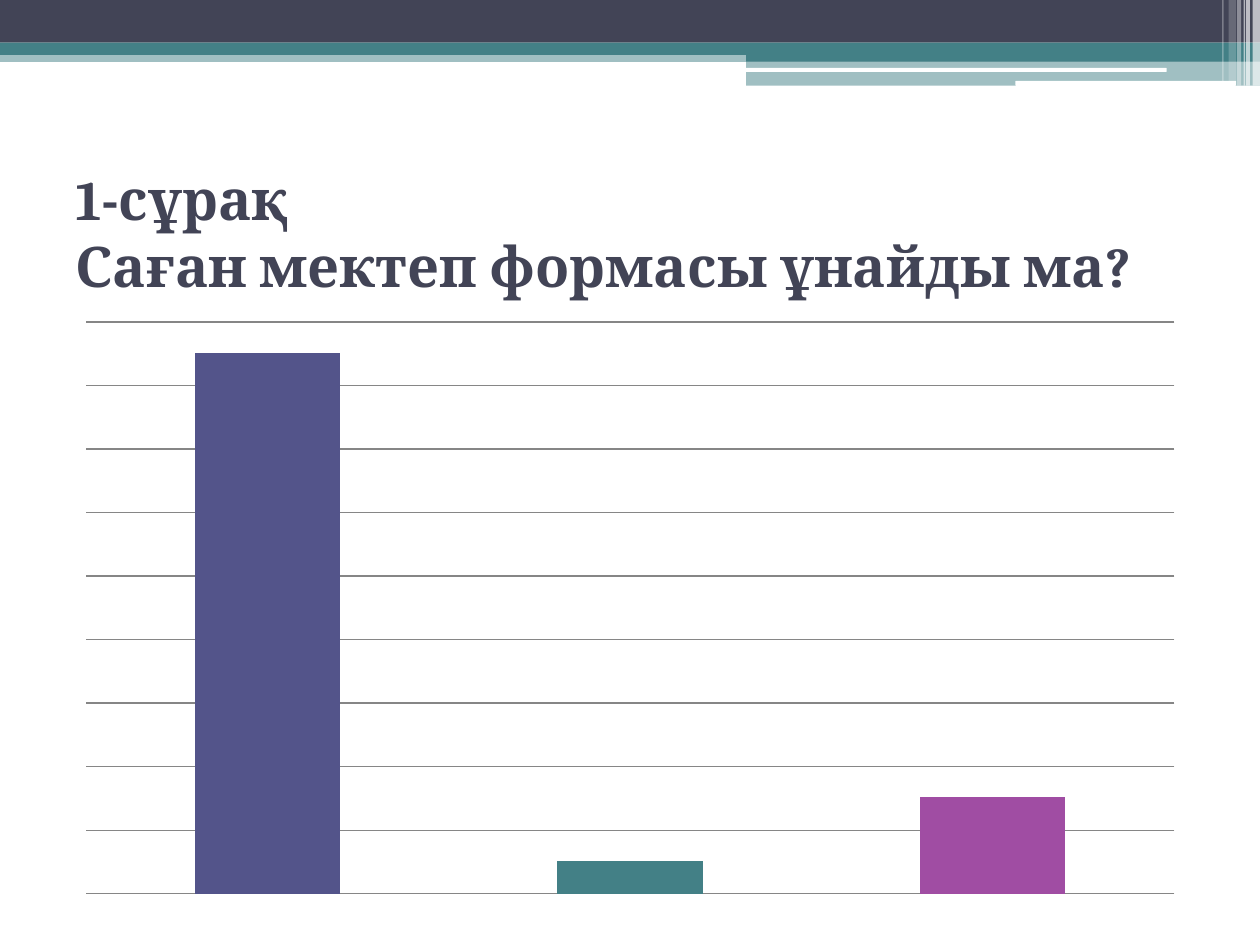
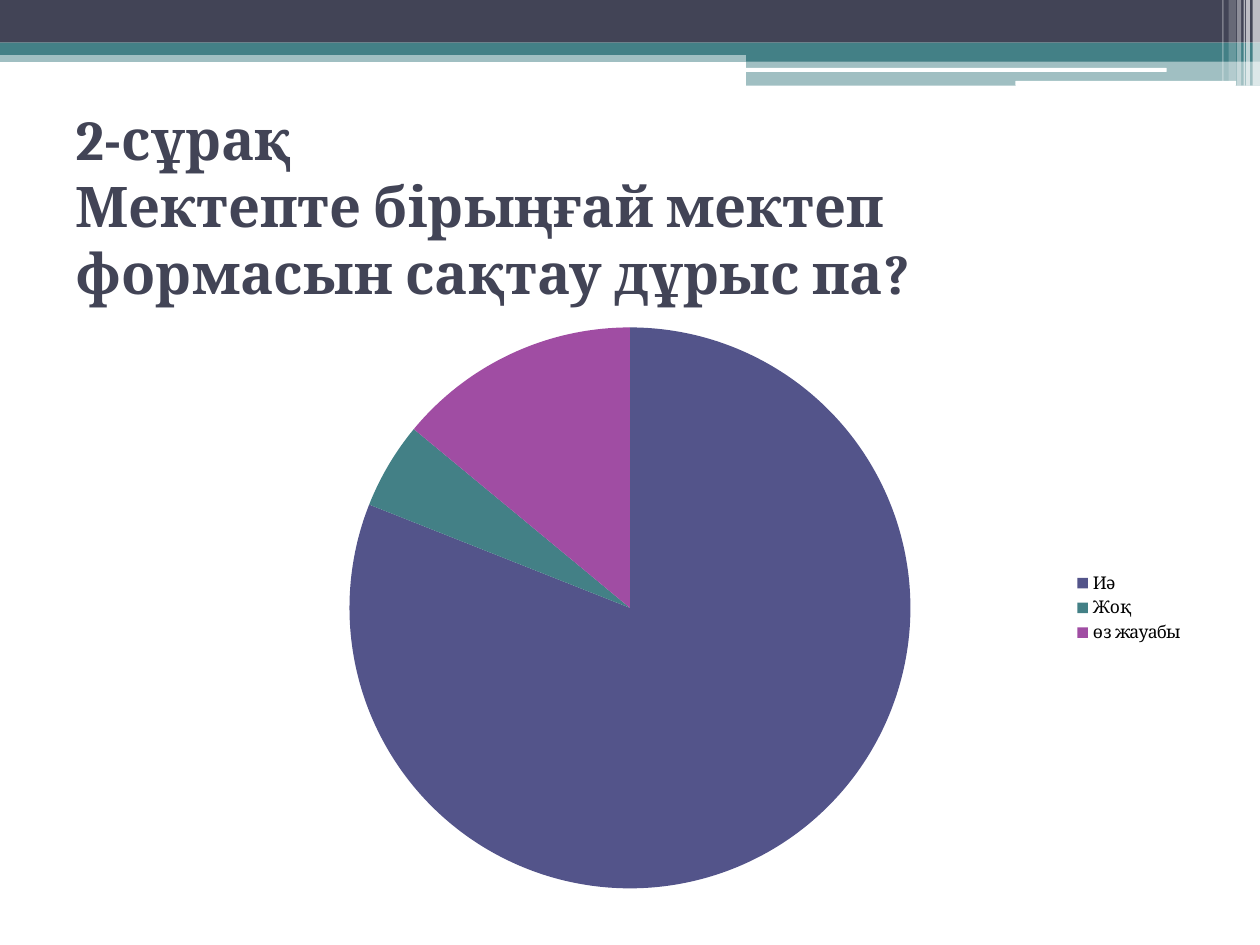
from pptx import Presentation
from pptx.chart.data import CategoryChartData
from pptx.dml.color import RGBColor
from pptx.enum.chart import XL_CHART_TYPE as ChartType, XL_LEGEND_POSITION as LegendPos
from pptx.enum.shapes import MSO_SHAPE as Shape
from pptx.enum.text import MSO_ANCHOR as Anchor, MSO_AUTO_SIZE as AutoSize, PP_ALIGN as Align
from pptx.oxml.ns import qn
from pptx.util import Cm, Pt
from lxml.etree import SubElement

INK = RGBColor(0x42, 0x44, 0x56)
TEAL = RGBColor(0x43, 0x80, 0x86)
INDIGO = RGBColor(0x53, 0x54, 0x8A)
PURPLE = RGBColor(0xA0, 0x4D, 0xA3)
GRID = RGBColor(0x86, 0x86, 0x86)
WHITE = RGBColor(0xFF, 0xFF, 0xFF)
BLACK = RGBColor(0, 0, 0)
ANSWER_COLORS = (INDIGO, TEAL, PURPLE)

FONT = "Cambria"
PAGE_W, PAGE_H = 25.4, 19.05
MARGIN = 1.27
BODY_W = PAGE_W - 2 * MARGIN
TITLE_BOTTOM = 6.15
CHART_TOP, CHART_H = 6.25, 12.01

# Header bands: left, top, width, height, colour, opacity in percent
STEP_X = 15.04
BANDS = [
    (0, 1.02, PAGE_W, 0.23, TEAL, 50),
    (0, 0, PAGE_W, 0.86, INK, 100),
    (0, 0.86, PAGE_W, 0.25, TEAL, 100),
    (STEP_X, 0.99, PAGE_W - STEP_X, 0.25, TEAL, 100),
    (STEP_X, 1.23, PAGE_W - STEP_X, 0.5, TEAL, 50),
]
WHITE_BARS = [(15.01, 1.37, 8.51, 0.08), (20.47, 1.63, 4.45, 0.1)]
# Stripes at the right edge: left, width, height, opacity
STRIPES = [
    (25.25, 0.15, 1.73, 65),
    (25.12, 0.08, 1.73, 65),
    (25.07, 0.03, 1.73, 60),
    (24.94, 0.08, 1.73, 40),
    (24.77, 0.15, 1.63, 20),
    (24.64, 0.03, 1.63, 30),
]


def style_font(font, size, color, bold=False):
    font.name, font.size, font.bold = FONT, Pt(size), bold
    font.color.rgb = color


def write(frame, text, size=32, color=INK, bold=True, align=Align.LEFT, anchor=Anchor.MIDDLE):
    frame.word_wrap = True
    frame.auto_size = AutoSize.NONE
    frame.vertical_anchor = anchor
    paragraph = frame.paragraphs[0]
    paragraph.text = text
    paragraph.alignment = align
    for run in paragraph.runs:
        style_font(run.font, size, color, bold)


class Deck:
    def __init__(self):
        self.prs = Presentation()
        self.prs.slide_width, self.prs.slide_height = Cm(PAGE_W), Cm(PAGE_H)
        self.layout = self.prs.slide_layouts[5]
        self.slide = None

    def new_slide(self):
        self.slide = self.prs.slides.add_slide(self.layout)

    def band(self, left, top, width, height, color, opacity=100, kind=Shape.RECTANGLE):
        band = self.slide.shapes.add_shape(kind, Cm(left), Cm(top), Cm(width), Cm(height))
        band.shadow.inherit = False
        band.line.fill.background()
        band.fill.solid()
        band.fill.fore_color.rgb = color
        if opacity < 100:
            tint = band.element.spPr.find(".//" + qn("a:srgbClr"))
            SubElement(tint, qn("a:alpha"), val=str(opacity * 1000))
        return band

    def header(self):
        """Draw the header on the current slide, then move it to the shared layout."""
        bands = [self.band(*band) for band in BANDS]
        bands += [self.band(*bar, WHITE, kind=Shape.ROUNDED_RECTANGLE) for bar in WHITE_BARS]
        bands += [self.band(left, 0, width, height, WHITE, opacity)
                  for left, width, height, opacity in STRIPES]
        tree = self.layout.shapes.element
        for i, band in enumerate(bands):
            band.element.nvSpPr.cNvPr.set("id", str(100 + i))
            tree.insert(2 + i, band.element)

    def title(self, text, top):
        title = self.slide.shapes.title
        title.left, title.top = Cm(MARGIN), Cm(top)
        title.width, title.height = Cm(BODY_W), Cm(TITLE_BOTTOM - top)
        write(title.text_frame, text)

    def chart(self, kind, answers, counts):
        data = CategoryChartData()
        data.categories = answers
        data.add_series("Series 1", counts)
        chart = self.slide.shapes.add_chart(
            kind, Cm(MARGIN), Cm(CHART_TOP), Cm(BODY_W), Cm(CHART_H), data).chart
        chart.has_title = chart.has_legend = False
        style_font(chart.font, 10, BLACK)
        plot = chart.plots[0]
        plot.vary_by_categories = True
        for i, color in enumerate(ANSWER_COLORS):
            fill = plot.series[0].points[i].format.fill
            fill.solid()
            fill.fore_color.rgb = color
        return chart

    def columns(self, answers, counts, step, steps):
        chart = self.chart(ChartType.COLUMN_CLUSTERED, answers, counts)
        chart.plots[0].gap_width = 150
        chart.category_axis.visible = False
        scale = chart.value_axis
        scale.visible = False
        scale.minimum_scale, scale.maximum_scale = 0, step * steps
        scale.major_unit = step
        scale.has_major_gridlines = True
        scale.major_gridlines.format.line.color.rgb = GRID
        scale.major_gridlines.format.line.width = Pt(0.75)

    def pie(self, answers, counts):
        chart = self.chart(ChartType.PIE, answers, counts)
        chart.has_legend = True
        chart.legend.position = LegendPos.RIGHT
        chart.legend.include_in_layout = True
        style_font(chart.legend.font, 10, BLACK)


def main():
    deck = Deck()

    # Question 1
    deck.new_slide()
    deck.header()
    deck.title("1-сұрақ \vСаған мектеп формасы ұнайды ма?", top=3.18)
    deck.columns(("1", "2", "3"), (100, 6, 18), step=11.76, steps=9)

    # Question 2
    deck.new_slide()
    deck.title("2-сұрақ\vМектепте бірыңғай мектеп формасын сақтау дұрыс па?", top=2.13)
    deck.pie(("Иә", "Жоқ", "өз жауабы"), (81, 5, 14))

    deck.prs.save("out.pptx")


if __name__ == "__main__":
    main()
